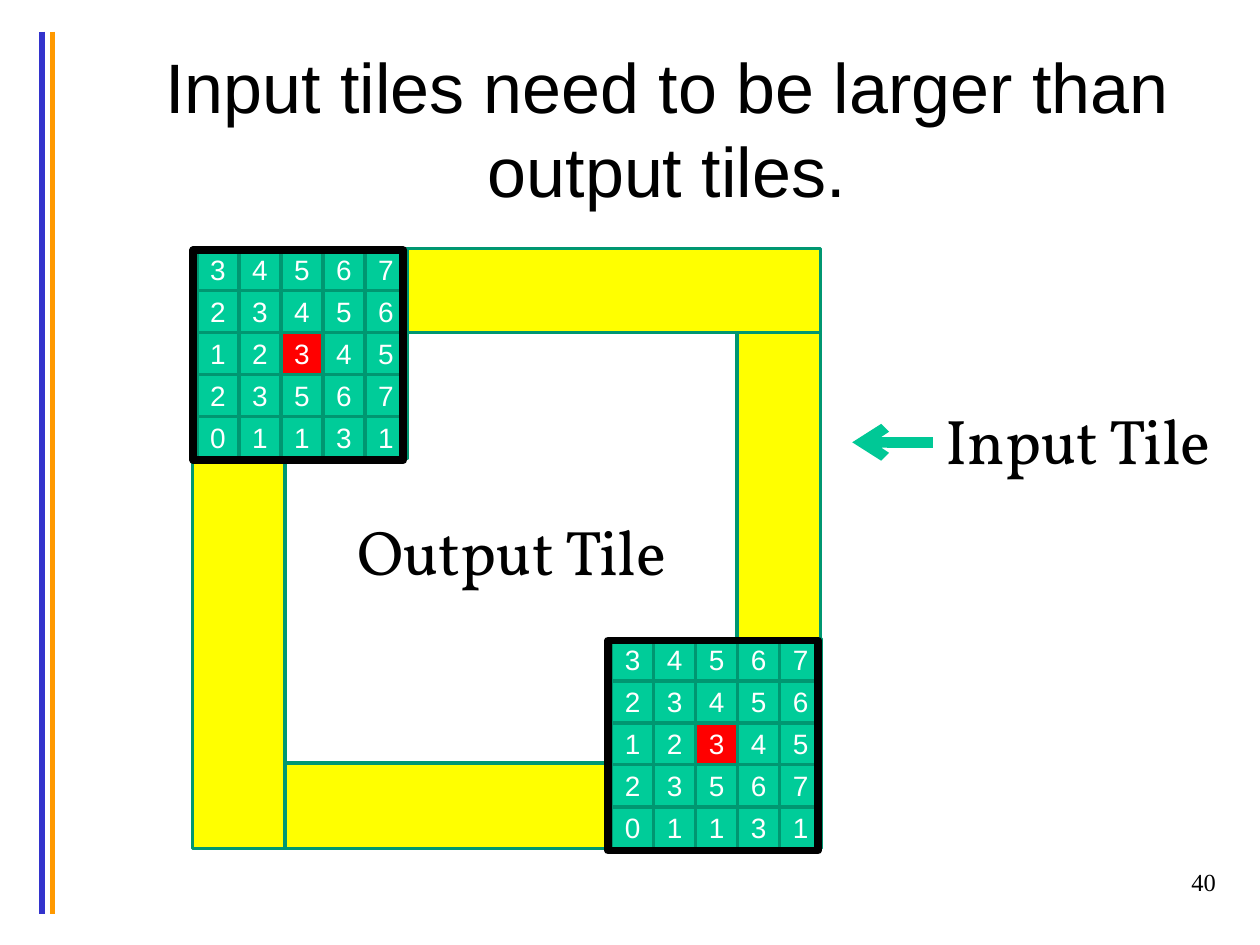
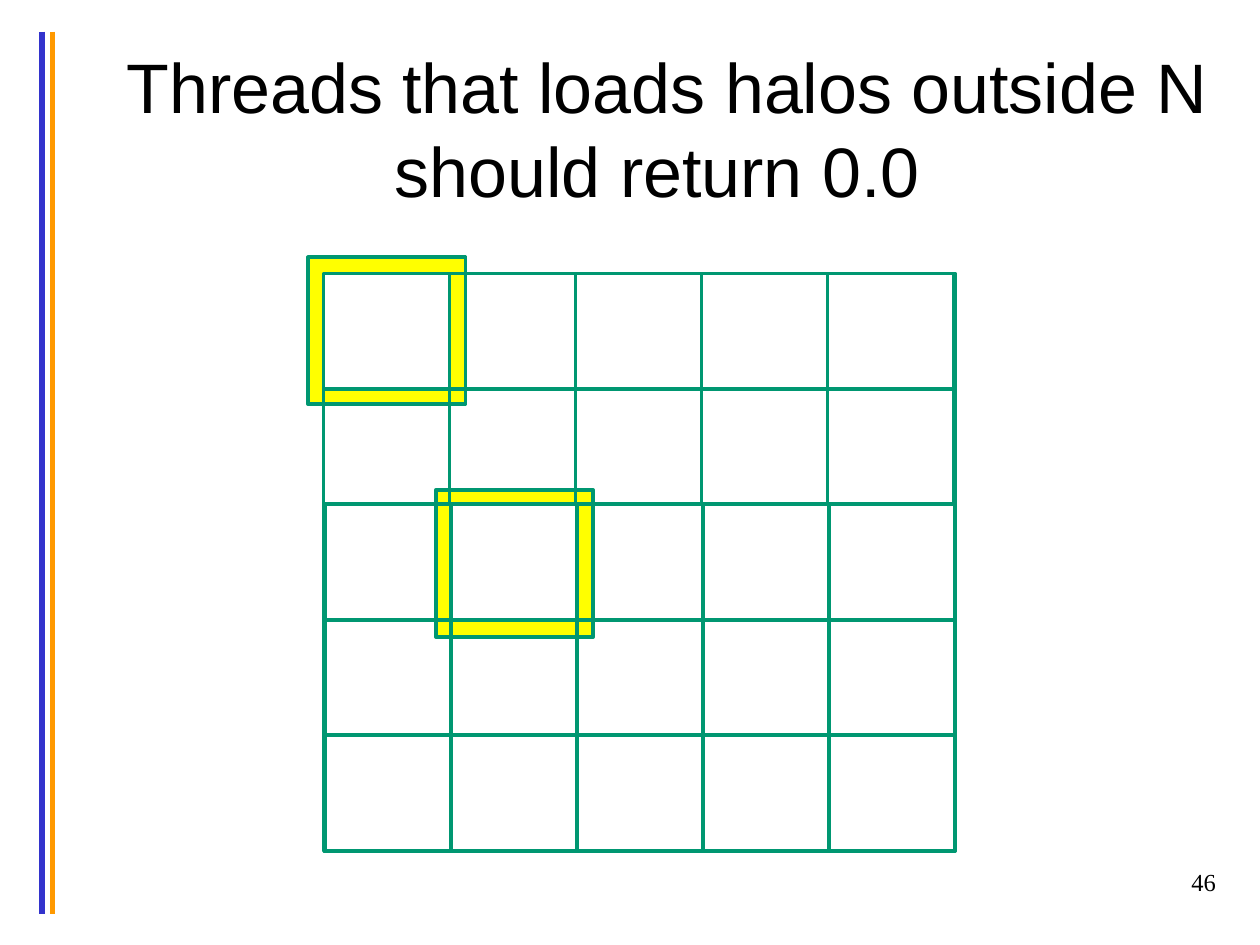
from lxml import etree
from pptx import Presentation
from pptx.dml.color import RGBColor
from pptx.enum.shapes import MSO_CONNECTOR, MSO_SHAPE
from pptx.enum.text import MSO_ANCHOR, MSO_AUTO_SIZE, PP_ALIGN
from pptx.oxml.ns import qn
from pptx.util import Pt

RECT = MSO_SHAPE.RECTANGLE
STRAIGHT = MSO_CONNECTOR.STRAIGHT
TOP, MIDDLE = MSO_ANCHOR.TOP, MSO_ANCHOR.MIDDLE
LEFT, CENTER, RIGHT = PP_ALIGN.LEFT, PP_ALIGN.CENTER, PP_ALIGN.RIGHT
NO_FIT = MSO_AUTO_SIZE.NONE

BLACK = RGBColor(0x00, 0x00, 0x00)
WHITE = RGBColor(0xFF, 0xFF, 0xFF)
BLUE = RGBColor(0x33, 0x33, 0xCC)
ORANGE = RGBColor(0xFF, 0x99, 0x00)
YELLOW = RGBColor(0xFF, 0xFF, 0x00)
GREEN = RGBColor(0x00, 0xCC, 0x99)
MINT = RGBColor(0x00, 0xC8, 0x96)
TEAL = RGBColor(0x00, 0x97, 0x71)
RED = RGBColor(0xFF, 0x00, 0x00)

SANS, SERIF, LABEL = "Arial", "Times New Roman", "Vollkorn"
TITLE_ONLY = 5

# Slide 1: the same 5 x 5 window of values sits in two corners
VALUES = ["34567", "23456", "12345", "23567", "01131"]
MID = (2, 2)
CELL = 24
CORNERS = [(112.5, 142), (349.5, 365)]
HALO = [(110, 142, 359, 48), (163, 436, 258, 49),
        (110, 142, 53, 343), (421, 190, 48, 296)]
OUTPUT = (163, 190, 258, 246)

# Slide 2: grid of output tiles, two of them ringed by a halo
GRID_X, GRID_Y = 185, 156.2
TILE_W, TILE_H = 72, 66
COUNT = 5
SHIFT = 0.75  # lower rows sit a little to the right
RINGED = [(0, 0), (2, 1)]
RINGS = [(249, 280, 90, 84), (176, 147, 90, 84)]


def write(frame, text, font=SANS, size=16, color=BLACK, align=LEFT,
          anchor=TOP, wrap=True, pad=None, pitch=None):
    """Put one formatted paragraph in a text frame."""
    frame.word_wrap = wrap
    frame.auto_size = NO_FIT
    frame.vertical_anchor = anchor
    if pad is not None:
        frame.margin_left = frame.margin_right = Pt(pad)
        frame.margin_top = frame.margin_bottom = Pt(pad)
    par = frame.paragraphs[0]
    par.alignment = align
    if pitch:
        par.line_spacing = Pt(pitch)
    run = par.add_run()
    run.text = text
    run.font.name = font
    run.font.size = Pt(size)
    run.font.color.rgb = color


class Deck:
    def __init__(self):
        self.prs = Presentation()
        self.prs.slide_width, self.prs.slide_height = Pt(720), Pt(540)
        self.slide = None

    def start(self, title, number):
        """Add a slide with its side bars, title and page number."""
        layout = self.prs.slide_layouts[TITLE_ONLY]
        self.slide = self.prs.slides.add_slide(layout)
        self.line(24, 18, 24, 522, BLUE, 3)
        self.line(30, 18, 30, 522, ORANGE, 3)
        head = self.slide.shapes.title
        head.left, head.top, head.width, head.height = map(Pt, (54, 19, 654, 108))
        write(head.text_frame, title, size=40, align=CENTER, anchor=MIDDLE,
              pitch=48)
        self.text((552, 492, 150, 36), str(number), font=SERIF, size=14,
                  align=RIGHT)

    def line(self, x1, y1, x2, y2, color, width, arrow=False):
        link = self.slide.shapes.add_connector(
            STRAIGHT, *map(Pt, (x1, y1, x2, y2)))
        link.line.color.rgb = color
        link.line.width = Pt(width)
        if arrow:
            tail = etree.SubElement(link.line._get_or_add_ln(), qn("a:tailEnd"))
            tail.set("type", "arrow")
        etree.SubElement(link._element.spPr, qn("a:effectLst"))

    def rect(self, box, fill=None, edge=TEAL, width=2):
        shape = self.slide.shapes.add_shape(RECT, *map(Pt, box))
        shape.shadow.inherit = False
        if fill is None:
            shape.fill.background()
        else:
            shape.fill.solid()
            shape.fill.fore_color.rgb = fill
        shape.line.color.rgb = edge
        shape.line.width = Pt(width)
        return shape

    def text(self, box, words, **style):
        shape = self.slide.shapes.add_textbox(*map(Pt, box))
        write(shape.text_frame, words, **style)

    def window(self, x, y):
        """Draw the framed window of values with its centre marked."""
        for row, digits in enumerate(VALUES):
            for col, digit in enumerate(digits):
                box = (x + col * CELL, y + row * CELL, CELL, CELL)
                cell = self.rect(box, RED if (row, col) == MID else GREEN)
                write(cell.text_frame, digit, color=WHITE, align=CENTER,
                      anchor=MIDDLE, pad=0)
        side = CELL * len(VALUES)
        self.rect((x - 2, y + 1, side, side), edge=BLACK, width=4.5)


def draw_tiles(deck):
    deck.start("Input tiles need to be larger than output tiles.", 40)
    deck.rect(OUTPUT)
    for box in HALO:
        deck.rect(box, YELLOW)
    for x, y in CORNERS:
        deck.window(x, y)
    deck.text((197, 289.5, 201, 51), "Output Tile", font=LABEL, size=36,
              wrap=False)
    deck.text((533, 226, 172, 51), "Input Tile", font=LABEL, size=36,
              wrap=False)
    deck.line(533, 252.75, 487, 252.75, MINT, 6, arrow=True)


def draw_halos(deck):
    deck.start("Threads that loads halos outside N should return 0.0 ", 46)
    for box in RINGS:
        deck.rect(box, YELLOW)
    deck.rect((GRID_X, GRID_Y, COUNT * TILE_W + SHIFT, COUNT * TILE_H))
    for row in range(COUNT):
        left = GRID_X + (SHIFT if row >= 2 else 0)
        for col in range(COUNT):
            box = (left + col * TILE_W, GRID_Y + row * TILE_H, TILE_W, TILE_H)
            deck.rect(box, WHITE if (row, col) in RINGED else None)


def main():
    deck = Deck()
    draw_tiles(deck)
    draw_halos(deck)
    deck.prs.save("out.pptx")


if __name__ == "__main__":
    main()
